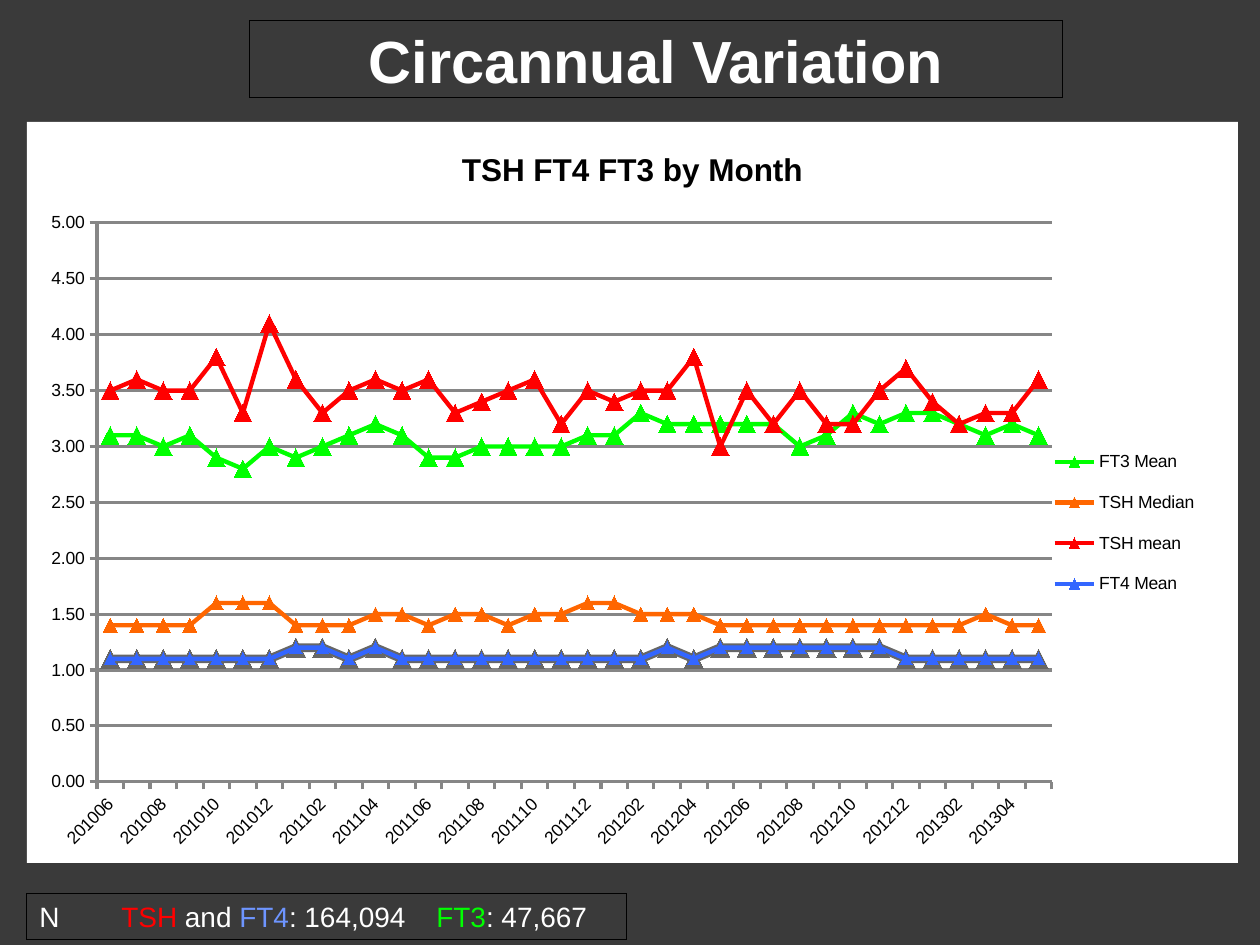
from lxml import etree
from pptx import Presentation
from pptx.chart.data import CategoryChartData
from pptx.dml.color import RGBColor
from pptx.enum.chart import XL_CHART_TYPE as CT, XL_LEGEND_POSITION as LP
from pptx.enum.chart import XL_MARKER_STYLE as MS, XL_TICK_MARK as TM
from pptx.enum.shapes import MSO_SHAPE
from pptx.enum.text import MSO_ANCHOR, PP_ALIGN
from pptx.oxml import parse_xml
from pptx.oxml.ns import nsdecls, qn
from pptx.util import Pt

PX = 914400 / 126
FONT = "Arial"
WHITE, BLACK, GREY = "FFFFFF", "000000", "868686"
RED, GREEN, ORANGE, BLUE, DARK = "FF0000", "00FF00", "FF6600", "3366FF", "666666"
CHART_W, CHART_H = 1211, 741

MONTHS = [f"{2010 + m // 12}{m % 12 + 1:02d}" for m in range(5, 41)]
FT3 = [3.1, 3.1, 3.0, 3.1, 2.9, 2.8, 3.0, 2.9, 3.0, 3.1, 3.2, 3.1,
       2.9, 2.9, 3.0, 3.0, 3.0, 3.0, 3.1, 3.1, 3.3, 3.2, 3.2, 3.2,
       3.2, 3.2, 3.0, 3.1, 3.3, 3.2, 3.3, 3.3, 3.2, 3.1, 3.2, 3.1]
TSH_MEDIAN = [1.4, 1.4, 1.4, 1.4, 1.6, 1.6, 1.6, 1.4, 1.4, 1.4, 1.5, 1.5,
              1.4, 1.5, 1.5, 1.4, 1.5, 1.5, 1.6, 1.6, 1.5, 1.5, 1.5, 1.4,
              1.4, 1.4, 1.4, 1.4, 1.4, 1.4, 1.4, 1.4, 1.4, 1.5, 1.4, 1.4]
TSH_MEAN = [3.5, 3.6, 3.5, 3.5, 3.8, 3.3, 4.1, 3.6, 3.3, 3.5, 3.6, 3.5,
            3.6, 3.3, 3.4, 3.5, 3.6, 3.2, 3.5, 3.4, 3.5, 3.5, 3.8, 3.0,
            3.5, 3.2, 3.5, 3.2, 3.2, 3.5, 3.7, 3.4, 3.2, 3.3, 3.3, 3.6]
FT4 = [1.1, 1.1, 1.1, 1.1, 1.1, 1.1, 1.1, 1.2, 1.2, 1.1, 1.2, 1.1,
       1.1, 1.1, 1.1, 1.1, 1.1, 1.1, 1.1, 1.1, 1.1, 1.2, 1.1, 1.2,
       1.2, 1.2, 1.2, 1.2, 1.2, 1.2, 1.1, 1.1, 1.1, 1.1, 1.1, 1.1]
# name, values, colour, line width, marker size
SERIES = [
    ("FT3 Mean", FT3, GREEN, 2.5, 10),
    ("TSH Median", TSH_MEDIAN, ORANGE, 2.5, 8),
    ("Series 3", FT4, DARK, 5, 11),
    ("TSH mean", TSH_MEAN, RED, 2.5, 10),
    ("FT4 Mean", FT4, BLUE, 2.5, 7),
]
HIDDEN_IN_LEGEND = 2


def px(n):
    return round(n * PX)


def rgb(value):
    return RGBColor.from_string(value)


def paint(fmt, color):
    fmt.fill.solid()
    fmt.fill.fore_color.rgb = rgb(color)


def stroke(line, color, width):
    line.color.rgb = rgb(color)
    line.width = Pt(width)


def set_font(font, size, color, bold=False):
    font.name, font.size, font.bold = FONT, Pt(size), bold
    font.color.rgb = rgb(color)


def add_box(slide, x, y, w, h, runs, size, bold=False, align=PP_ALIGN.LEFT, tabs=()):
    """Box with a hairline outline and one line of coloured runs."""
    sp = slide.shapes.add_textbox(px(x), px(y), px(w), px(h))
    sp.line.color.rgb = rgb(BLACK)
    tf = sp.text_frame
    tf.word_wrap = True
    tf.vertical_anchor = MSO_ANCHOR.MIDDLE
    p = tf.paragraphs[0]
    p.alignment = align
    if tabs:
        tab_list = etree.SubElement(p._p.get_or_add_pPr(), qn("a:tabLst"))
        for pos in tabs:
            etree.SubElement(tab_list, qn("a:tab"), pos=str(px(pos)), algn="l")
    for text, color in runs:
        r = p.add_run()
        r.text = text
        set_font(r.font, size, color, bold)


def manual_layout(x, y, w, h, inner=False):
    """Layout in px within the chart, stored as fractions of its size."""
    target = '<c:layoutTarget val="inner"/>' if inner else ""
    parts = {"x": x / CHART_W, "y": y / CHART_H, "w": w / CHART_W, "h": h / CHART_H}
    modes = "".join(f'<c:{k}Mode val="edge"/>' for k in "xy")
    sizes = "".join(f'<c:{k} val="{v:.4f}"/>' for k, v in parts.items())
    return parse_xml(f'<c:layout {nsdecls("c")}><c:manualLayout>{target}{modes}{sizes}'
                     '</c:manualLayout></c:layout>')


def style_axis(axis):
    axis.major_tick_mark, axis.minor_tick_mark = TM.OUTSIDE, TM.NONE
    stroke(axis.format.line, GREY, 1.75)
    set_font(axis.tick_labels.font, 10, BLACK)


def style_axes(chart):
    months, values = chart.category_axis, chart.value_axis
    style_axis(months)
    style_axis(values)
    months.has_major_gridlines = False
    months._element.find(qn("c:txPr")).find(qn("a:bodyPr")).set("rot", "-2700000")
    skip = parse_xml(f'<c:tickLblSkip {nsdecls("c")} val="2"/>')
    months._element.find(qn("c:noMultiLvlLbl")).addprevious(skip)
    values.minimum_scale, values.maximum_scale, values.major_unit = 0, 5, 0.5
    values.tick_labels.number_format = "0.00"
    values.tick_labels.number_format_is_linked = False
    values.has_major_gridlines = True
    stroke(values.major_gridlines.format.line, GREY, 1.75)


def style_legend(chart):
    chart.has_legend = True
    legend = chart.legend
    legend.position, legend.include_in_layout = LP.RIGHT, False
    set_font(legend.font, 10, BLACK)
    hidden = parse_xml(f'<c:legendEntry {nsdecls("c")}><c:idx val="{HIDDEN_IN_LEGEND}"/>'
                       '<c:delete val="1"/></c:legendEntry>')
    el = legend._element
    for old in el.findall(qn("c:layout")):
        el.remove(old)
    pos = el.find(qn("c:legendPos"))
    pos.addnext(manual_layout(1010, 309, 175, 184))
    pos.addnext(hidden)


def add_line_chart(slide, x, y):
    data = CategoryChartData(number_format="0.00")
    data.categories = MONTHS
    for name, values, *_ in SERIES:
        data.add_series(name, values)
    chart = slide.shapes.add_chart(CT.LINE_MARKERS, px(x), px(y), px(CHART_W),
                                   px(CHART_H), data).chart
    set_font(chart.font, 10, BLACK)
    chart.has_title = True
    tf = chart.chart_title.text_frame
    tf.text = "TSH FT4 FT3 by Month"
    set_font(tf.paragraphs[0].runs[0].font, 18, BLACK, True)

    # Series
    plot = chart.plots[0]
    plot.vary_by_categories = False
    for ser, (_, _, color, width, size) in zip(plot.series, SERIES):
        ser.smooth = False
        stroke(ser.format.line, color, width)
        ser.marker.style, ser.marker.size = MS.TRIANGLE, size
        paint(ser.marker.format, color)
        stroke(ser.marker.format.line, color, 0.75)

    style_axes(chart)
    style_legend(chart)

    # Plot position and white chart background
    area = chart._chartSpace.chart.plotArea
    for old in area.findall(qn("c:layout")):
        area.remove(old)
    area.insert(0, manual_layout(70, 101, 955, 559, inner=True))
    background = parse_xml(f'<c:spPr {nsdecls("c", "a")}><a:solidFill><a:srgbClr val="{WHITE}"/>'
                           '</a:solidFill><a:ln><a:noFill/></a:ln></c:spPr>')
    chart._chartSpace.chart.addnext(background)


def main():
    prs = Presentation()
    prs.slide_width, prs.slide_height = px(1260), px(945)
    slide = prs.slides.add_slide(prs.slide_layouts[6])
    paint(slide.background, "3A3A3A")

    # Heading
    add_box(slide, 249, 21, 814, 77, [("Circannual Variation", WHITE)], 34, True,
            PP_ALIGN.CENTER)
    # Sample sizes
    add_box(slide, 27, 893, 600, 47,
            [("N\t", WHITE), ("TSH", RED), (" and ", WHITE), ("FT4", "6E95FF"),
             (": 164,094\t", WHITE), ("FT3", GREEN), (": 47,667", WHITE)],
            16, tabs=(82, 397))
    # Monthly values
    add_line_chart(slide, 27, 122)

    prs.save("out.pptx")


if __name__ == "__main__":
    main()
